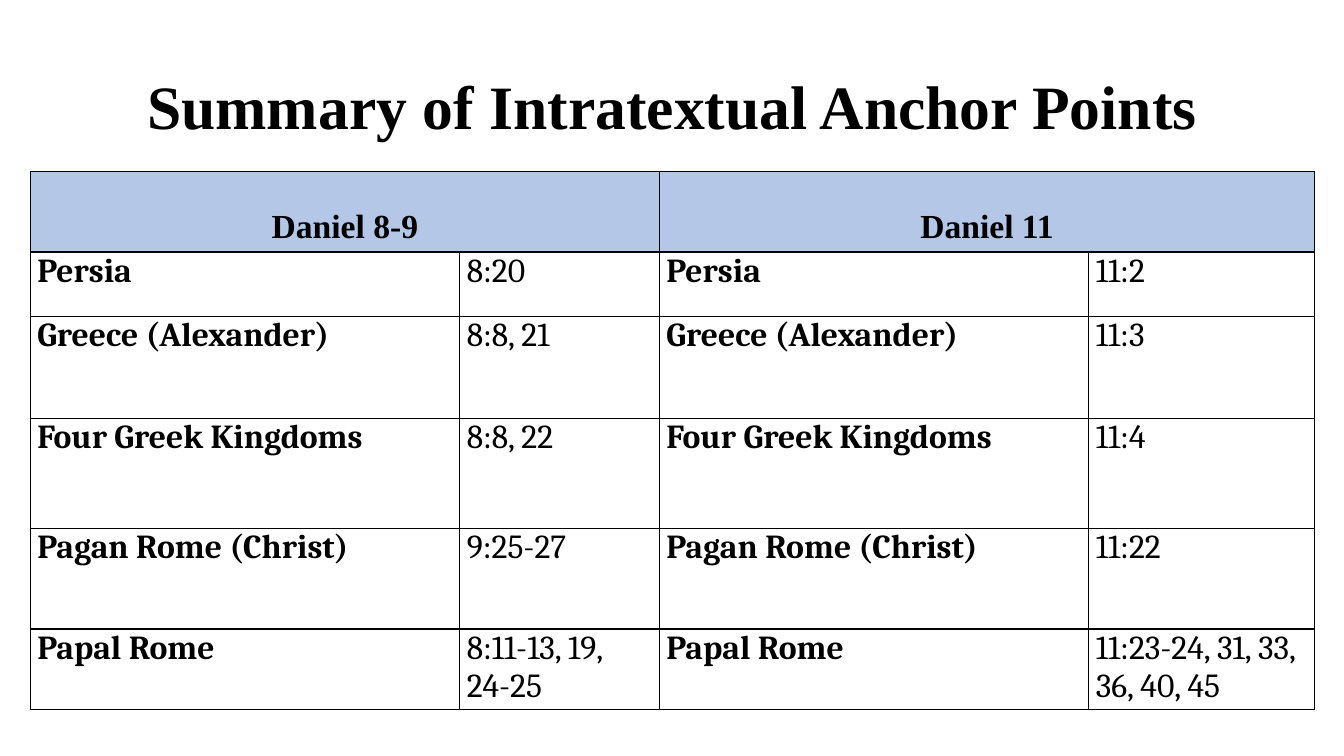
from lxml import etree
from pptx import Presentation
from pptx.dml.color import RGBColor
from pptx.enum.text import MSO_ANCHOR, PP_ALIGN
from pptx.oxml.ns import qn
from pptx.util import Inches, Pt

BLACK = RGBColor(0x00, 0x00, 0x00)
BLUE = RGBColor(0xB4, 0xC7, 0xE7)
LEFT, CENTER = PP_ALIGN.LEFT, PP_ALIGN.CENTER
TOP, MIDDLE = MSO_ANCHOR.TOP, MSO_ANCHOR.MIDDLE

SERIF = "Times New Roman"
TITLE = {"name": SERIF, "size": Pt(44), "bold": True}
HEAD = {"name": SERIF, "size": Pt(24), "bold": True}
POWER = {"name": "Cambria", "size": Pt(24), "bold": True}
VERSE = {**POWER, "bold": False}
INSET = {
    "margin_left": Inches(0.07),
    "margin_right": Inches(0.07),
    "margin_top": 0,
    "margin_bottom": 0,
    "vertical_anchor": TOP,
}

COLS = [4.26, 1.98, 4.26, 2.24]
ROWS = [0.74, 0.64, 1.01, 1.09, 1, 0.76]
HEADS = ["Daniel 8-9", "Daniel 11"]
POINTS = [
    ("Persia", "8:20", "11:2"),
    ("Greece (Alexander)", "8:8, 21", "11:3"),
    ("Four Greek Kingdoms", "8:8, 22", "11:4"),
    ("Pagan Rome (Christ)", "9:25-27", "11:22"),
    ("Papal Rome", "8:11-13, 19, 24-25", "11:23-24, 31, 33, 36, 40, 45"),
]


def set_all(item, values):
    for key, value in values.items():
        setattr(item, key, value)


def write(frame, text, style, align=LEFT, space=1.0):
    para = frame.paragraphs[0]
    para.alignment = align
    para.line_spacing = space
    run = para.add_run()
    run.text = text
    set_all(run.font, style)
    run.font.color.rgb = BLACK


def add_title(slide, text):
    box = slide.shapes.add_textbox(
        Inches(0.92), Inches(0.13), Inches(11.5), Inches(1.46))
    frame = box.text_frame
    set_all(frame, {"word_wrap": True, "vertical_anchor": MIDDLE})
    write(frame, text, TITLE, CENTER, 1.5)


def add_border(cell):
    props = cell._tc.get_or_add_tcPr()
    for side in ("lnL", "lnR", "lnT", "lnB"):
        line = etree.SubElement(props, qn(f"a:{side}"), w=str(Pt(1)))
        fill = etree.SubElement(line, qn("a:solidFill"))
        etree.SubElement(fill, qn("a:srgbClr"), val=str(BLACK))


def add_grid(slide):
    shape = slide.shapes.add_table(
        len(ROWS), len(COLS), Inches(0.3), Inches(1.7),
        Inches(sum(COLS)), Inches(sum(ROWS)))
    table = shape.table
    set_all(table, {"first_row": False, "horz_banding": False})
    for col, width in zip(table.columns, COLS):
        col.width = Inches(width)
    for row, height in zip(table.rows, ROWS):
        row.height = Inches(height)
    for cell in table.iter_cells():
        set_all(cell, INSET)
        add_border(cell)
        cell.fill.background()
    return table


def fill_heads(table):
    for i, text in enumerate(HEADS):
        cell = table.cell(0, 2 * i)
        cell.merge(table.cell(0, 2 * i + 1))
        cell.fill.solid()
        cell.fill.fore_color.rgb = BLUE
        write(cell.text_frame, text, HEAD, CENTER, 2.0)


def fill_points(table):
    for r, (power, early, late) in enumerate(POINTS, 1):
        for c, text in enumerate((power, early, power, late)):
            style = VERSE if c % 2 else POWER
            write(table.cell(r, c).text_frame, text, style)


def main():
    deck = Presentation()
    deck.slide_width, deck.slide_height = Inches(13.33), Inches(7.5)
    slide = deck.slides.add_slide(deck.slide_layouts[6])

    # Heading
    add_title(slide, "Summary of Intratextual Anchor Points")

    # Table of anchor points
    table = add_grid(slide)
    fill_heads(table)
    fill_points(table)

    deck.save("out.pptx")


if __name__ == "__main__":
    main()
